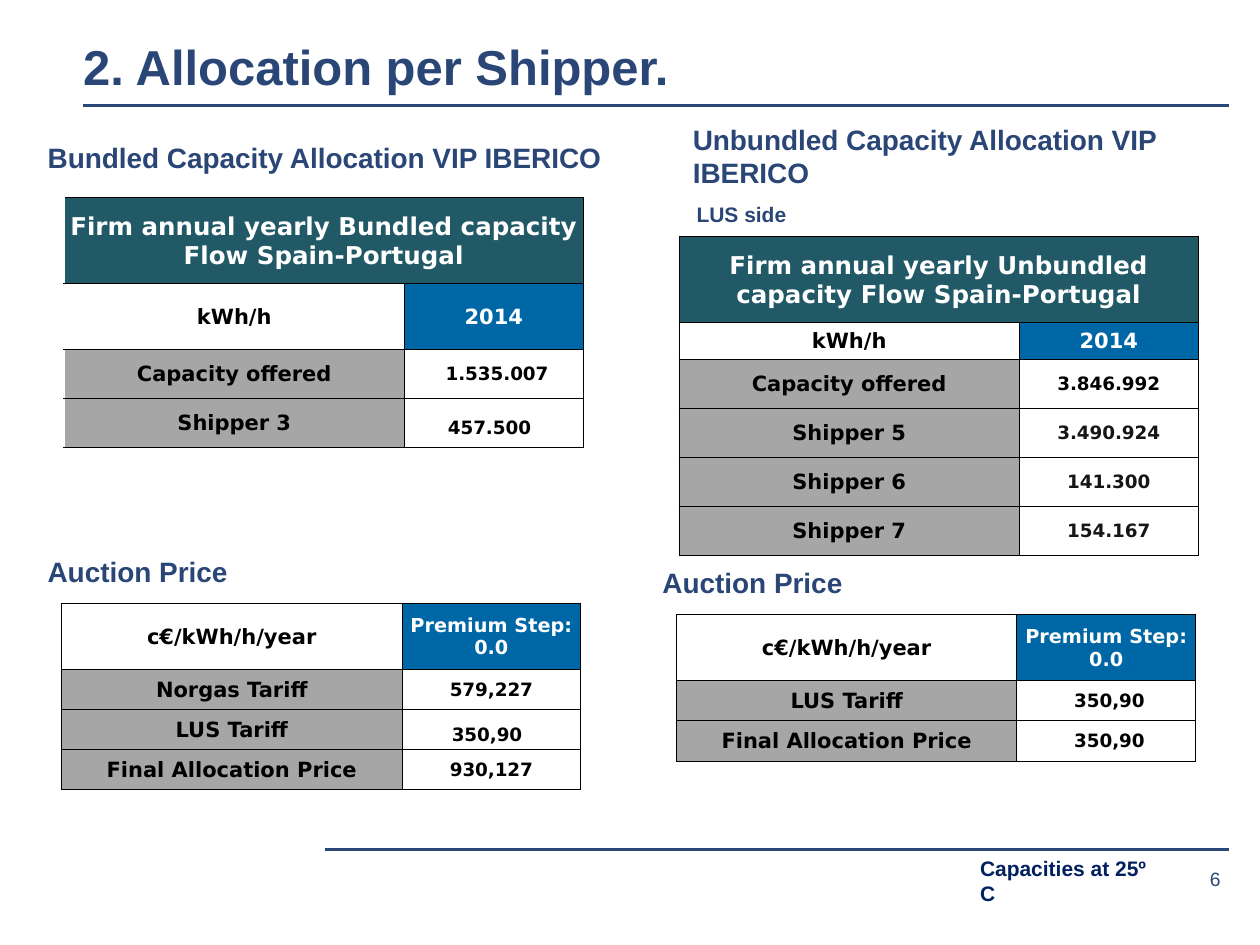
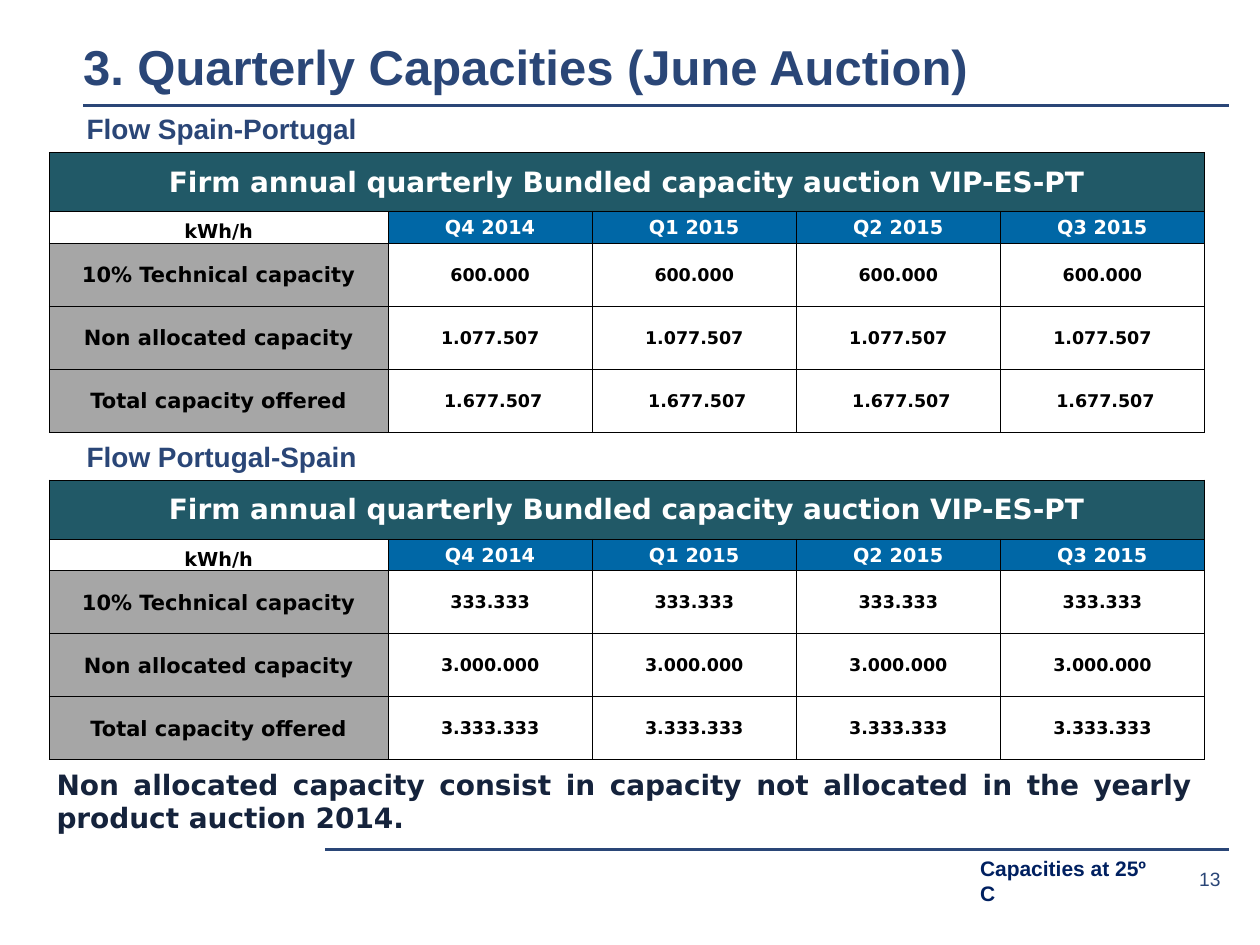
import pptx
import pptx.util
import pptx.dml.color
import pptx.enum.shapes
import pptx.enum.text
import pptx.oxml
import pptx.oxml.ns
from lxml import etree

Inches, Pt = pptx.util.Inches, pptx.util.Pt
RGBColor = pptx.dml.color.RGBColor
ANCHOR = pptx.enum.text.MSO_ANCHOR
ALIGN = pptx.enum.text.PP_ALIGN
qn = pptx.oxml.ns.qn

NAVY = RGBColor(0x2A, 0x46, 0x77)
FOOTER_BLUE = RGBColor(0x00, 0x20, 0x60)
NOTE_INK = RGBColor(0x15, 0x23, 0x3C)
TEAL = RGBColor(0x21, 0x59, 0x67)
BLUE = RGBColor(0x00, 0x67, 0xA6)
GREY = RGBColor(0xA6, 0xA6, 0xA6)
WHITE = RGBColor(0xFF, 0xFF, 0xFF)
BLACK = RGBColor(0, 0, 0)
SOFT_BLACK = RGBColor(0x16, 0x16, 0x16)
ARIAL, DEJAVU = "Arial", "DejaVu Sans"

SHIPPER_COLS = [2.7, 1.42]
QUARTER_COLS = [2.69] + [1.62] * 4
QUARTERS = ["Q4 2014", "Q1 2015", "Q2 2015", "Q3 2015"]


def add_run(p, text, size, color, font=ARIAL, bold=True):
    r = p.add_run()
    r.text = text
    r.font.size, r.font.name, r.font.bold = Pt(size), font, bold
    r.font.color.rgb = color


def set_margins(target, left, top, right, bottom):
    target.margin_left, target.margin_top = Inches(left), Inches(top)
    target.margin_right, target.margin_bottom = Inches(right), Inches(bottom)


def add_text(s, x, y, w, h, text, size, color=NAVY, font=ARIAL, bold=True, align=ALIGN.LEFT):
    tf = s.shapes.add_textbox(Inches(x), Inches(y), Inches(w), Inches(h)).text_frame
    tf.word_wrap = True
    p = tf.paragraphs[0]
    p.alignment = align
    add_run(p, text, size, color, font, bold)
    return tf


def add_rule(s, x1, x2, y):
    line = s.shapes.add_connector(pptx.enum.shapes.MSO_CONNECTOR.STRAIGHT,
                                  Inches(x1), Inches(y), Inches(x2), Inches(y))
    line.line.color.rgb, line.line.width = NAVY, Pt(1.5)
    etree.SubElement(line._element.spPr, qn("a:effectLst"))


# Title, rules and footer shared by the slides
def new_slide(prs, title, number):
    s = prs.slides.add_slide(prs.slide_layouts[5])
    sp = s.shapes.title
    sp.left, sp.top, sp.width, sp.height = Inches(0.66), Inches(0.36), Inches(9.11), Inches(0.4)
    tf = sp.text_frame
    tf.word_wrap, tf.vertical_anchor = True, ANCHOR.BOTTOM
    tf.auto_size = pptx.enum.text.MSO_AUTO_SIZE.NONE
    set_margins(tf, 0, 0, 0, 0)
    tf.paragraphs[0].alignment = ALIGN.LEFT
    add_run(tf.paragraphs[0], title, 28, NAVY)
    add_rule(s, 0.66, 9.75, 0.84)
    add_rule(s, 2.58, 9.75, 6.74)
    add_text(s, 7.68, 6.74, 1.63, 0.3, "Capacities at 25º C", 12, FOOTER_BLUE)
    tf = add_text(s, 8.94, 6.82, 0.79, 0.31, f"{number} ", 11, bold=False, align=ALIGN.RIGHT)
    tf.vertical_anchor = ANCHOR.MIDDLE
    set_margins(tf, 0, 0, 0, 0)
    return s


def set_borders(cell, sides):
    tcPr = cell._tc.get_or_add_tcPr()
    for i, side in enumerate(sides):
        ln = etree.Element(qn(f"a:ln{side}"), w="6350")
        fill = etree.SubElement(ln, qn("a:solidFill"))
        etree.SubElement(fill, qn("a:srgbClr"), val=str(BLACK))
        tcPr.insert(i, ln)


def fill_cell(cell, text, size, color, fill=None, anchor=ANCHOR.MIDDLE, tail=""):
    set_margins(cell, 0.01, 0.01, 0.01, 0)
    cell.vertical_anchor = anchor
    if fill is None:
        cell.fill.background()
    else:
        cell.fill.solid()
        cell.fill.fore_color.rgb = fill
    p = cell.text_frame.paragraphs[0]
    p.alignment = ALIGN.CENTER
    add_run(p, text, size, color, DEJAVU)
    if tail:
        add_run(p, tail, 18, WHITE, bold=False)


# Table: optional banner, a unit and header row, then labelled values.
# A value given as a pair has a large trailing space that lowers its line.
def capacity_table(s, x, y, cols, heights, header, rows, banner=None, banner_size=14,
                   unit_size=12, head_size=12, value_size=10.5, unit_anchor=ANCHOR.MIDDLE,
                   shipper_color=BLACK, open_left=False):
    frame = s.shapes.add_table(len(heights), len(cols), Inches(x), Inches(y),
                               Inches(sum(cols)), Inches(sum(heights)))
    t = frame.table
    t.first_row = t.horz_banding = False
    for col, w in zip(t.columns, cols):
        col.width = Inches(w)
    for row, h in zip(t.rows, heights):
        row.height = Inches(h)

    top = 0
    if banner:
        t.cell(0, 0).merge(t.cell(0, len(cols) - 1))
        fill_cell(t.cell(0, 0), banner, banner_size, WHITE, TEAL)
        top = 1
    fill_cell(t.cell(top, 0), header[0], unit_size, BLACK, anchor=unit_anchor)
    for c, text in enumerate(header[1:], 1):
        fill_cell(t.cell(top, c), text, head_size, WHITE, BLUE)
    for i, (label, *values) in enumerate(rows, top + 1):
        fill_cell(t.cell(i, 0), label, 12, BLACK, GREY)
        color = shipper_color if label.startswith("Shipper") else BLACK
        for c, value in enumerate(values, 1):
            text, tail = value if isinstance(value, tuple) else (value, "")
            fill_cell(t.cell(i, c), text, value_size, color, WHITE, tail=tail)
    for i in range(len(heights)):
        for c in range(len(cols)):
            set_borders(t.cell(i, c), "RTB" if open_left and c == 0 else "LRTB")


# Auction price heading with its tariff table
def auction_price(s, x, y, rows):
    add_text(s, x, y, 5.04, 0.37, "Auction Price", 16)
    capacity_table(s, x + 0.21, y + 0.44, SHIPPER_COLS, [0.52] + [0.32] * len(rows),
                   ["c€/kWh/h/year", "Premium Step: 0.0"], rows, head_size=11)


# Flow heading with its quarterly table
def quarterly_flow(s, x, y, flow, technical, unallocated, total):
    add_text(s, x + 0.2, y, 5.2, 0.37, flow, 16)
    rows = [[label] + [value] * len(QUARTERS) for label, value in (
        ("10% Technical capacity", technical),
        ("Non allocated capacity", unallocated),
        ("Total capacity offered", total))]
    capacity_table(s, x, y + 0.37, QUARTER_COLS, [0.47, 0.25] + [0.5] * 3,
                   ["kWh/h"] + QUARTERS, rows,
                   banner="Firm annual quarterly Bundled capacity auction VIP-ES-PT",
                   banner_size=16, unit_size=11, head_size=11, value_size=10,
                   unit_anchor=ANCHOR.BOTTOM)


def allocation_slide(prs):
    s = new_slide(prs, "2. Allocation per Shipper.", 6)
    # Bundled capacity
    add_text(s, 0.28, 1.07, 4.88, 0.37, "Bundled Capacity Allocation VIP IBERICO", 16)
    capacity_table(s, 0.51, 1.57, SHIPPER_COLS, [0.68, 0.52, 0.39, 0.39], ["kWh/h", "2014"],
                   [("Capacity offered", " 1.535.007"), ("Shipper 3", ("457.500", " "))],
                   banner="Firm annual yearly Bundled capacity Flow Spain-Portugal",
                   open_left=True)
    auction_price(s, 0.28, 4.35, [("Norgas Tariff", " 579,227 "),
                                  ("LUS Tariff", ("350,90", " ")),
                                  ("Final Allocation Price", "930,127")])
    # Unbundled capacity
    add_text(s, 5.4, 0.92, 4.25, 0.64, "Unbundled Capacity Allocation VIP IBERICO", 16)
    add_text(s, 5.43, 1.55, 4.43, 0.3, "LUS side", 12)
    capacity_table(s, 5.39, 1.88, SHIPPER_COLS, [0.68, 0.29] + [0.39] * 4, ["kWh/h", "2014"],
                   [("Capacity offered", "3.846.992"), ("Shipper 5", "3.490.924"),
                    ("Shipper 6", "141.300"), ("Shipper 7", "154.167")],
                   banner="Firm annual yearly Unbundled capacity Flow Spain-Portugal",
                   shipper_color=SOFT_BLACK)
    auction_price(s, 5.16, 4.44, [("LUS Tariff", " 350,90"),
                                  ("Final Allocation Price", " 350,90")])


def quarterly_slide(prs):
    s = new_slide(prs, "3. Quarterly Capacities (June Auction)", 13)
    quarterly_flow(s, 0.39, 0.84, "Flow Spain-Portugal", "600.000", "1.077.507", " 1.677.507")
    quarterly_flow(s, 0.39, 3.44, "Flow Portugal-Spain", "333.333", "3.000.000", "3.333.333")
    # Closing note
    add_text(s, 0.35, 6.04, 9.21, 0.64,
             "Non allocated capacity consist in capacity not allocated in the yearly "
             "product auction 2014.", 16, NOTE_INK, DEJAVU, align=ALIGN.JUSTIFY)


def main():
    prs = pptx.Presentation()
    prs.slide_width, prs.slide_height = Inches(10), Inches(7.5)
    allocation_slide(prs)
    quarterly_slide(prs)
    prs.save("out.pptx")


if __name__ == "__main__":
    main()
